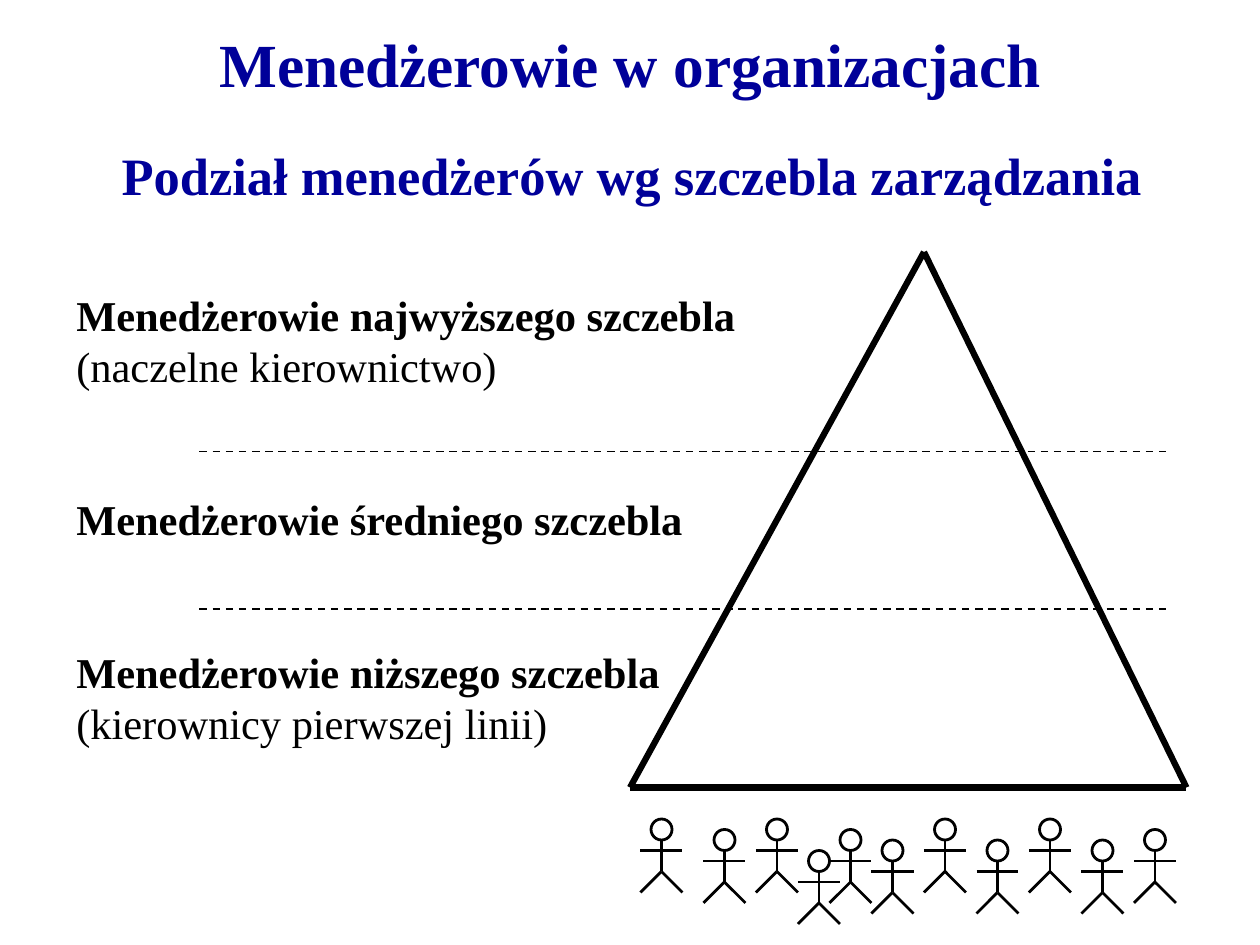
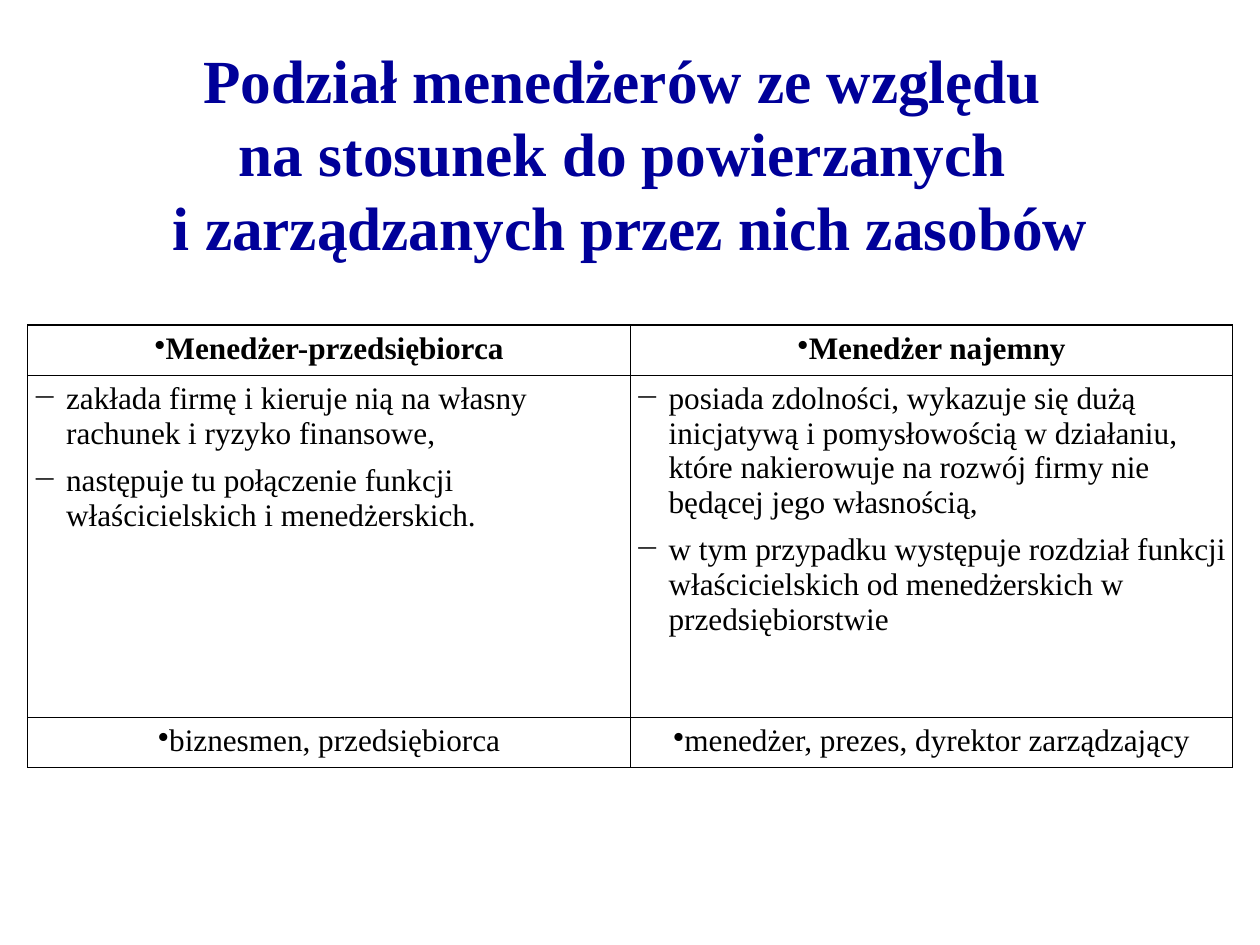
from lxml import etree
from pptx import Presentation
from pptx.dml.color import RGBColor
from pptx.enum.dml import MSO_LINE
from pptx.enum.shapes import MSO_CONNECTOR, MSO_SHAPE
from pptx.enum.text import MSO_ANCHOR, MSO_AUTO_SIZE, PP_ALIGN
from pptx.oxml.ns import qn
from pptx.util import Pt

STRAIGHT = MSO_CONNECTOR.STRAIGHT
HEAD_SHAPE = MSO_SHAPE.FLOWCHART_CONNECTOR
DASH = MSO_LINE.DASH
LEFT, CENTER, RIGHT = PP_ALIGN.LEFT, PP_ALIGN.CENTER, PP_ALIGN.RIGHT
TOP, MIDDLE = MSO_ANCHOR.TOP, MSO_ANCHOR.MIDDLE
GROW = MSO_AUTO_SIZE.SHAPE_TO_FIT_TEXT

FONT = "Times New Roman"
COLORS = {"heading": "000099", "ink": "000000", "paper": "FFFFFF"}
SLIDE_WIDTH, SLIDE_HEIGHT = 1008, 756
UNIT = 8.4  # grid step of the pyramid and the workers

HEADING_INSETS = (10, 5)
LEVEL_INSETS = (7.2, 3.6)
CELL_INSETS = (3.6, 5)

LEVELS = [  # text, bold, blank lines before
    ("Menedżerowie najwyższego szczebla", True, 0),
    ("(naczelne kierownictwo)", False, 0),
    ("Menedżerowie średniego szczebla", True, 2),
    ("Menedżerowie niższego szczebla", True, 2),
    ("(kierownicy pierwszej linii)", False, 0),
]
WORKERS = [(6, 1), (0, 0), (47, 1), (42, 2), (37, 0), (11, 0),
           (15, 3), (22, 2), (27, 0), (18, 1), (32, 2)]
MANAGER_TYPES = [
    [["Menedżer-przedsiębiorca"], ["Menedżer najemny"]],
    [["zakłada firmę i kieruje nią na własny rachunek i ryzyko finansowe,",
      "następuje tu połączenie funkcji właścicielskich i menedżerskich."],
     ["posiada zdolności, wykazuje się dużą inicjatywą i pomysłowością "
      "w działaniu, które nakierowuje na rozwój firmy nie będącej jego "
      "własnością,",
      "w tym przypadku występuje rozdział funkcji właścicielskich od "
      "menedżerskich w przedsiębiorstwie"]],
    [["biznesmen, przedsiębiorca"],
     ["menedżer, prezes, dyrektor zarządzający"]],
]


def rgb(name):
    return RGBColor.from_string(COLORS[name])


def set_all(target, values):
    for key, value in values.items():
        setattr(target, key, value)


def insets(pair):
    side, edge = map(Pt, pair)
    return {"margin_left": side, "margin_right": side,
            "margin_top": edge, "margin_bottom": edge}


def write(paragraph, text, size, color="ink", bold=False, align=LEFT,
          leading=1.2, before=0, after=0):
    paragraph.text = text
    set_all(paragraph, {"alignment": align,
                        "line_spacing": Pt(round(size * leading, 2)),
                        "space_before": Pt(before), "space_after": Pt(after)})
    for run in paragraph.runs:
        set_all(run.font, {"name": FONT, "size": Pt(size), "bold": bold})
        run.font.color.rgb = rgb(color)


def text_frame(shapes, box, pair, **settings):
    frame = shapes.add_textbox(*map(Pt, box)).text_frame
    set_all(frame, {**insets(pair), **settings})
    return frame


def line(shapes, start, end, width, dash=None):
    connector = shapes.add_connector(STRAIGHT, *map(Pt, (*start, *end)))
    connector.line.color.rgb = rgb("ink")
    set_all(connector.line, {"width": Pt(width), "dash_style": dash})
    etree.SubElement(connector._element.spPr, qn("a:effectLst"))


def title(slide, box, text):
    frame = text_frame(slide.shapes, box, HEADING_INSETS,
                       word_wrap=True, vertical_anchor=MIDDLE)
    write(frame.paragraphs[0], text, 49, "heading", True, CENTER)


def subtitle(slide, box, text):
    frame = text_frame(slide.shapes, box, HEADING_INSETS,
                       word_wrap=False, auto_size=GROW)
    write(frame.paragraphs[0], text, 42, "heading", True, RIGHT)


def management_levels(slide, box):
    left, top, width, height = box
    shapes = slide.shapes.add_group_shape().shapes

    # Names of the levels
    frame = text_frame(shapes, (left, top + 26, 556.5, 378), LEVEL_INSETS,
                       word_wrap=False, auto_size=GROW)
    for index, (text, bold, gap) in enumerate(LEVELS):
        paragraph = frame.add_paragraph() if index else frame.paragraphs[0]
        write(paragraph, text, 34, bold=bold, before=gap * 40.8)

    # Pyramid
    right, bottom = left + width, top + height
    apex = (right - 25 * UNIT, top)
    base_left, base_right = (right - 53 * UNIT, bottom), (right, bottom)
    for start, end in ((apex, base_left), (apex, base_right),
                       (base_left, base_right)):
        line(shapes, start, end, 5)

    # Borders between the levels
    for step in (19, 34):
        y = top + step * UNIT
        line(shapes, (right - 94 * UNIT, y), (right - 2 * UNIT, y), 1.5, DASH)


def worker(shapes, left, top):
    def at(column, row):
        return left + column * UNIT, top + row * UNIT

    head = shapes.add_shape(HEAD_SHAPE, *map(Pt, (*at(1, 0), 2 * UNIT, 2 * UNIT)))
    head.shadow.inherit = False
    head.fill.solid()
    head.fill.fore_color.rgb = rgb("paper")
    head.line.color.rgb = rgb("ink")
    head.line.width = Pt(2.25)
    # Torso, legs and arms
    for start, end in (((2, 2), (2, 5)), ((2, 5), (0, 7)),
                       ((2, 5), (4, 7)), ((0, 3), (4, 3))):
        line(shapes, at(*start), at(*end), 2.25)


def workforce(slide, left, top):
    shapes = slide.shapes.add_group_shape().shapes
    for column, row in WORKERS:
        worker(shapes, left + column * UNIT, top + row * UNIT)


def add_bullet(paragraph, char, hanging):
    properties = paragraph._p.get_or_add_pPr()
    properties.set("marL", str(Pt(hanging)))
    properties.set("indent", str(-Pt(hanging)))
    if hanging:
        color = etree.SubElement(properties, qn("a:buClr"))
        etree.SubElement(color, qn("a:srgbClr"), val=COLORS["ink"])
    etree.SubElement(properties, qn("a:buChar"), char=char)
    if hanging:
        tabs = etree.SubElement(properties, qn("a:tabLst"))
        etree.SubElement(tabs, qn("a:tab"), pos=str(Pt(18)), algn="l")


def style_cell(cell):
    set_all(cell, {**insets(CELL_INSETS), "vertical_anchor": TOP})
    cell.fill.solid()
    cell.fill.fore_color.rgb = rgb("paper")
    properties = cell._tc.get_or_add_tcPr()
    for index, side in enumerate(("a:lnL", "a:lnR", "a:lnT", "a:lnB")):
        border = etree.Element(qn(side), w=str(Pt(0.96)))
        fill = etree.SubElement(border, qn("a:solidFill"))
        etree.SubElement(fill, qn("a:srgbClr"), val=COLORS["ink"])
        properties.insert(index, border)


def comparison(slide, box):
    left, top, width, height = box
    rows, columns = len(MANAGER_TYPES), len(MANAGER_TYPES[0])
    table = slide.shapes.add_table(rows, columns, *map(Pt, box)).table
    set_all(table, {"first_row": False, "horz_banding": False})
    for column in table.columns:
        column.width = Pt(width / columns)
    edge_row = 40.3
    for row, row_height in zip(table.rows,
                               (edge_row, height - 2 * edge_row, edge_row)):
        row.height = Pt(row_height)

    for r, row in enumerate(MANAGER_TYPES):
        is_body = r == 1
        for c, points in enumerate(row):
            cell = table.cell(r, c)
            style_cell(cell)
            for index, text in enumerate(points):
                frame = cell.text_frame
                paragraph = frame.add_paragraph() if index else frame.paragraphs[0]
                add_bullet(paragraph, *(("−", 27) if is_body else ("•", 0)))
                write(paragraph, text, 25, bold=r == 0,
                      align=LEFT if is_body else CENTER, leading=1.11,
                      before=5 if index else 0, after=5)


def levels_slide(slide):
    title(slide, (75.6, 25.2, 856.8, 50.4), "Menedżerowie w organizacjach")
    subtitle(slide, (79.2, 109.4, 844.6, 61.2),
             "Podział menedżerów wg szczebla zarządzania")
    management_levels(slide, (54, 201.6, 895.2, 428.4))
    workforce(slide, 512.4, 655.2)


def resources_slide(slide):
    title(slide, (75.6, 59, 856.8, 126),
          "Podział menedżerów ze względu \vna stosunek do powierzanych "
          "\vi zarządzanych przez nich zasobów")
    comparison(slide, (22.3, 260, 964, 354.2))


def main():
    deck = Presentation()
    set_all(deck, {"slide_width": Pt(SLIDE_WIDTH),
                   "slide_height": Pt(SLIDE_HEIGHT)})
    for build in (levels_slide, resources_slide):
        build(deck.slides.add_slide(deck.slide_layouts[6]))
    deck.save("out.pptx")


if __name__ == "__main__":
    main()
